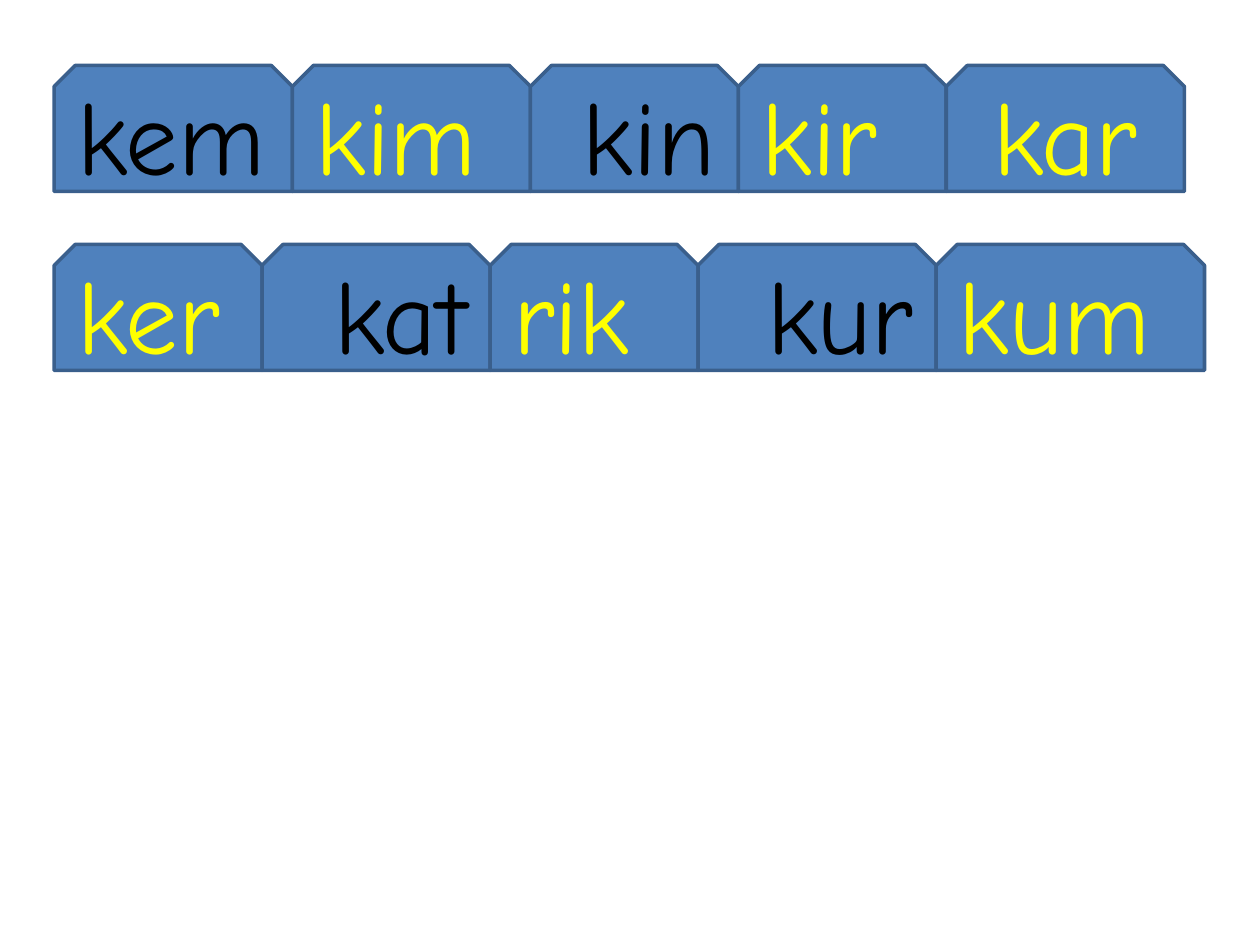
from pptx import Presentation
from pptx.dml.color import RGBColor
from pptx.enum.shapes import MSO_SHAPE
from pptx.enum.text import MSO_ANCHOR, PP_ALIGN
from pptx.util import Inches, Pt

TAB = MSO_SHAPE.SNIP_2_SAME_RECTANGLE
MIDDLE = MSO_ANCHOR.MIDDLE
LEFT, CENTER, RIGHT = PP_ALIGN.LEFT, PP_ALIGN.CENTER, PP_ALIGN.RIGHT

COLORS = {"tab": "4F81BD", "edge": "3A5F8C", "black": "000000", "yellow": "FFFF00"}

# Rows of syllables: text, tab width, alignment, text colour
SYLLABLE_ROWS = [
    [
        ("kem", 1.89, LEFT, "black"),
        ("kim", 1.89, LEFT, "yellow"),
        ("kin", 1.65, RIGHT, "black"),
        ("kir", 1.65, LEFT, "yellow"),
        ("kar", 1.89, CENTER, "yellow"),
    ],
    [
        ("ker", 1.65, LEFT, "yellow"),
        ("kat", 1.81, RIGHT, "black"),
        ("rik", 1.65, LEFT, "yellow"),
        ("kur", 1.89, RIGHT, "black"),
        ("kum", 2.13, LEFT, "yellow"),
    ],
]
ROW_LEFT, FIRST_TOP, ROW_STEP, TAB_HEIGHT = 0.43, 0.52, 1.42, 1
FONT = {"name": "Comic Neue", "size": Pt(60)}


def rgb(color):
    return RGBColor.from_string(COLORS[color])


def add_syllable(slide, left, top, width, syllable, alignment, color):
    tab = slide.shapes.add_shape(
        TAB, Inches(left), Inches(top), Inches(width), Inches(TAB_HEIGHT))
    tab.shadow.inherit = False
    tab.fill.solid()
    tab.fill.fore_color.rgb = rgb("tab")
    tab.line.color.rgb = rgb("edge")
    tab.line.width = Pt(2)
    tab.text_frame.vertical_anchor = MIDDLE
    paragraph = tab.text_frame.paragraphs[0]
    paragraph.alignment = alignment
    run = paragraph.add_run()
    run.text = syllable
    for attribute, value in FONT.items():
        setattr(run.font, attribute, value)
    run.font.color.rgb = rgb(color)


def main():
    prs = Presentation()
    prs.slide_width, prs.slide_height = Inches(10), Inches(7.5)
    slide = prs.slides.add_slide(prs.slide_layouts[6])

    # Tabs stand side by side, each starting where the last one ends
    for row_index, row in enumerate(SYLLABLE_ROWS):
        left = ROW_LEFT
        top = FIRST_TOP + row_index * ROW_STEP
        for syllable, width, alignment, color in row:
            add_syllable(slide, left, top, width, syllable, alignment, color)
            left += width

    prs.save("out.pptx")


if __name__ == "__main__":
    main()
